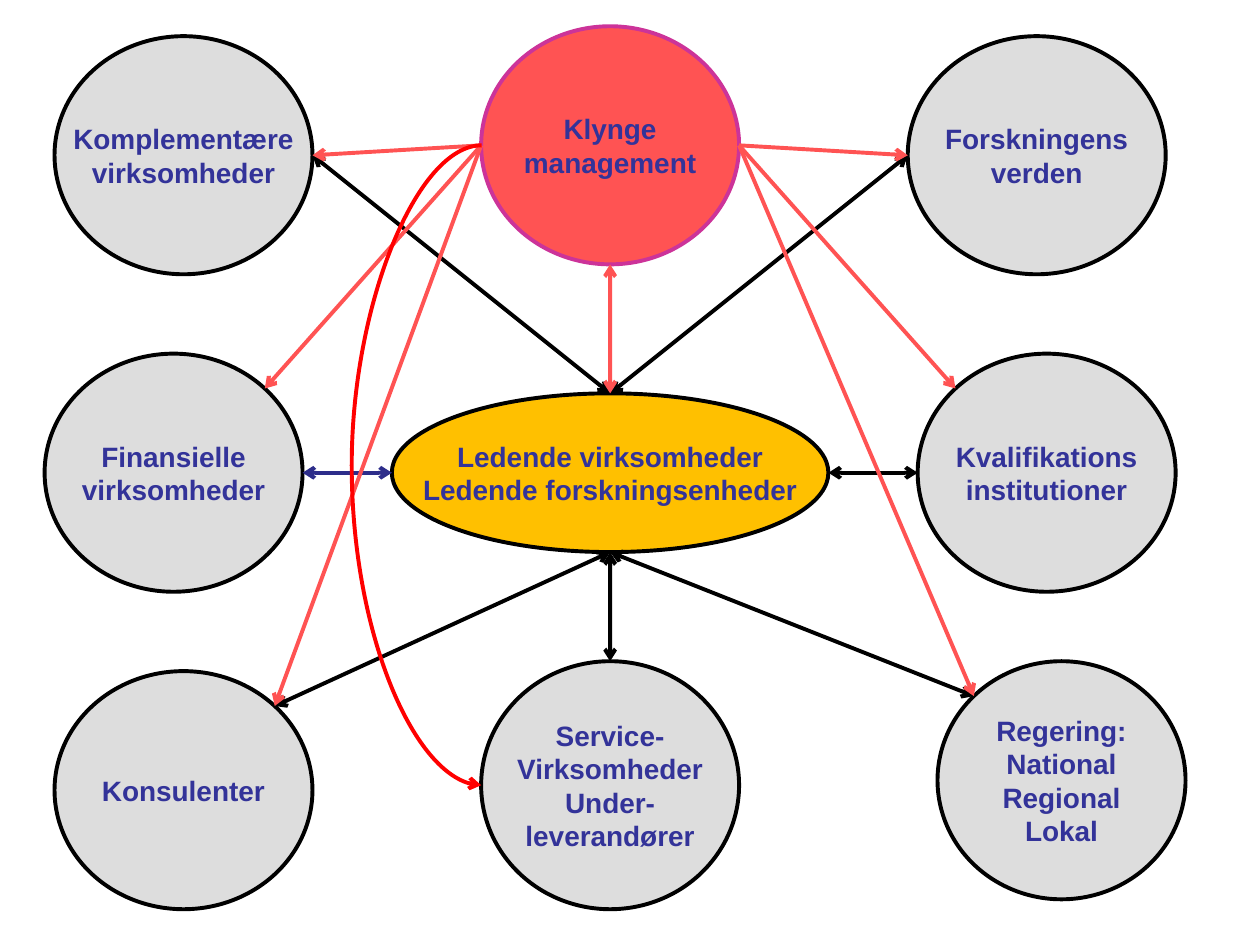
import math

import lxml.etree
import pptx
import pptx.dml.color
import pptx.enum.shapes
import pptx.enum.text
import pptx.oxml.ns
import pptx.util

Cm = pptx.util.Cm
RGBColor = pptx.dml.color.RGBColor
CONNECTOR = pptx.enum.shapes.MSO_CONNECTOR

BLACK = RGBColor(0x00, 0x00, 0x00)
GREY = RGBColor(0xDD, 0xDD, 0xDD)
GOLD = RGBColor(0xFF, 0xC0, 0x00)
CORAL = RGBColor(0xFF, 0x53, 0x53)
MAGENTA = RGBColor(0xCC, 0x33, 0x99)
RED = RGBColor(0xFF, 0x00, 0x00)
NAVY = RGBColor(0x2D, 0x2D, 0x8A)
INDIGO = RGBColor(0x33, 0x33, 0x99)

LINE_WIDTH = pptx.util.Pt(2.25)
CURVE_WIDTH = Cm(0.01)
CURVE_BULGE = Cm(2.62)

ACTORS = {
    "government": (18.9, 13.33, 5, 4.8, ["Regering:", "National", "Regional", "Lokal"], GREY, BLACK),
    "leaders": (7.9, 7.93, 8.8, 3.2, ["Ledende virksomheder", "Ledende forskningsenheder"], GOLD, BLACK),
    "complementary": (1.1, 0.73, 5.2, 4.8, ["Komplementære", "virksomheder"], GREY, BLACK),
    "research": (18.3, 0.73, 5.2, 4.8, ["Forskningens", "verden"], GREY, BLACK),
    "qualification": (18.5, 7.13, 5.2, 4.8, ["Kvalifikations", "institutioner"], GREY, BLACK),
    "consultants": (1.1, 13.53, 5.2, 4.8, ["Konsulenter"], GREY, BLACK),
    "finance": (0.9, 7.13, 5.2, 4.8, ["Finansielle", "virksomheder"], GREY, BLACK),
    "management": (9.7, 0.53, 5.2, 4.8, ["Klynge", "management"], CORAL, MAGENTA),
    "service": (9.7, 13.33, 5.2, 5, ["Service-", "Virksomheder", "Under-", "leverandører"], GREY, BLACK),
}

ANGLES = {"right": 0, "top right": 45, "top": 90, "top left": 135, "left": 180, "bottom": 270}

LINKS = [
    ("complementary", "right", "leaders", "top", BLACK, True),
    ("finance", "right", "leaders", "left", NAVY, True),
    ("consultants", "top right", "leaders", "bottom", BLACK, True),
    ("leaders", "top", "research", "left", BLACK, True),
    ("leaders", "right", "qualification", "left", BLACK, True),
    ("leaders", "bottom", "government", "top left", BLACK, True),
    ("management", "left", "complementary", "right", CORAL, False),
    ("management", "left", "finance", "top right", CORAL, False),
    ("management", "left", "consultants", "top right", CORAL, False),
    ("leaders", "bottom", "service", "top", BLACK, True),
    ("management", "right", "qualification", "top left", CORAL, False),
    ("management", "right", "research", "left", CORAL, False),
    ("management", "right", "government", "top left", CORAL, False),
    ("management", "bottom", "leaders", "top", CORAL, True),
]


def add_actor(slide, box, lines, fill_color, line_color):
    shape = slide.shapes.add_shape(pptx.enum.shapes.MSO_SHAPE.OVAL, *box)
    shape.shadow.inherit = False
    shape.fill.solid()
    shape.fill.fore_color.rgb = fill_color
    shape.line.color.rgb = line_color
    shape.line.width = LINE_WIDTH
    text_frame = shape.text_frame
    text_frame.word_wrap = False
    text_frame.vertical_anchor = pptx.enum.text.MSO_ANCHOR.MIDDLE
    for index, line in enumerate(lines):
        paragraph = text_frame.add_paragraph() if index else text_frame.paragraphs[0]
        paragraph.alignment = pptx.enum.text.PP_ALIGN.CENTER
        run = paragraph.add_run()
        run.text = line
        run.font.name = "Arial"
        run.font.size = pptx.util.Pt(16)
        run.font.bold = True
        run.font.color.rgb = INDIGO
    return shape


def edge_point(shape, side):
    angle = math.radians(ANGLES[side])
    x = shape.left + shape.width / 2 * (1 + math.cos(angle))
    y = shape.top + shape.height / 2 * (1 - math.sin(angle))
    return round(x), round(y)


def add_arrow(slide, kind, start, end, color, two_way):
    connector = slide.shapes.add_connector(kind, *start, *end)
    connector.line.color.rgb = color
    connector.line.width = LINE_WIDTH
    line = connector.line._get_or_add_ln()
    for tag in ("a:headEnd", "a:tailEnd") if two_way else ("a:tailEnd",):
        lxml.etree.SubElement(line, pptx.oxml.ns.qn(tag), type="arrow")
    properties = connector._element.spPr
    lxml.etree.SubElement(properties, pptx.oxml.ns.qn("a:effectLst"))
    return connector


def add_curve(slide, start, end, color):
    end = (end[0] + CURVE_WIDTH, end[1])
    connector = add_arrow(slide, CONNECTOR.CURVE, start, end, color, False)
    properties = connector._element.spPr
    transform = properties.find(pptx.oxml.ns.qn("a:xfrm"))
    transform.set("rot", "10800000")
    transform.set("flipV", "1")
    geometry = properties.find(pptx.oxml.ns.qn("a:prstGeom"))
    adjustments = geometry.find(pptx.oxml.ns.qn("a:avLst"))
    if adjustments is None:
        adjustments = lxml.etree.SubElement(geometry, pptx.oxml.ns.qn("a:avLst"))
    bulge = round(CURVE_BULGE / CURVE_WIDTH * 100000)
    lxml.etree.SubElement(adjustments, pptx.oxml.ns.qn("a:gd"), name="adj1", fmla=f"val {bulge}")


def add_cluster_map(slide, left, top):
    actors = {}
    for name, (x, y, width, height, lines, fill_color, line_color) in ACTORS.items():
        box = (left + Cm(x), top + Cm(y), Cm(width), Cm(height))
        actors[name] = add_actor(slide, box, lines, fill_color, line_color)
    for source, source_side, target, target_side, color, two_way in LINKS:
        start = edge_point(actors[source], source_side)
        end = edge_point(actors[target], target_side)
        add_arrow(slide, CONNECTOR.STRAIGHT, start, end, color, two_way)
    start = edge_point(actors["management"], "left")
    end = edge_point(actors["service"], "left")
    add_curve(slide, start, end, RED)


def main():
    presentation = pptx.Presentation()
    presentation.slide_width = Cm(25.4)
    presentation.slide_height = Cm(19.05)
    slide = presentation.slides.add_slide(presentation.slide_layouts[6])
    add_cluster_map(slide, Cm(0), Cm(0))
    presentation.save("out.pptx")


if __name__ == "__main__":
    main()
